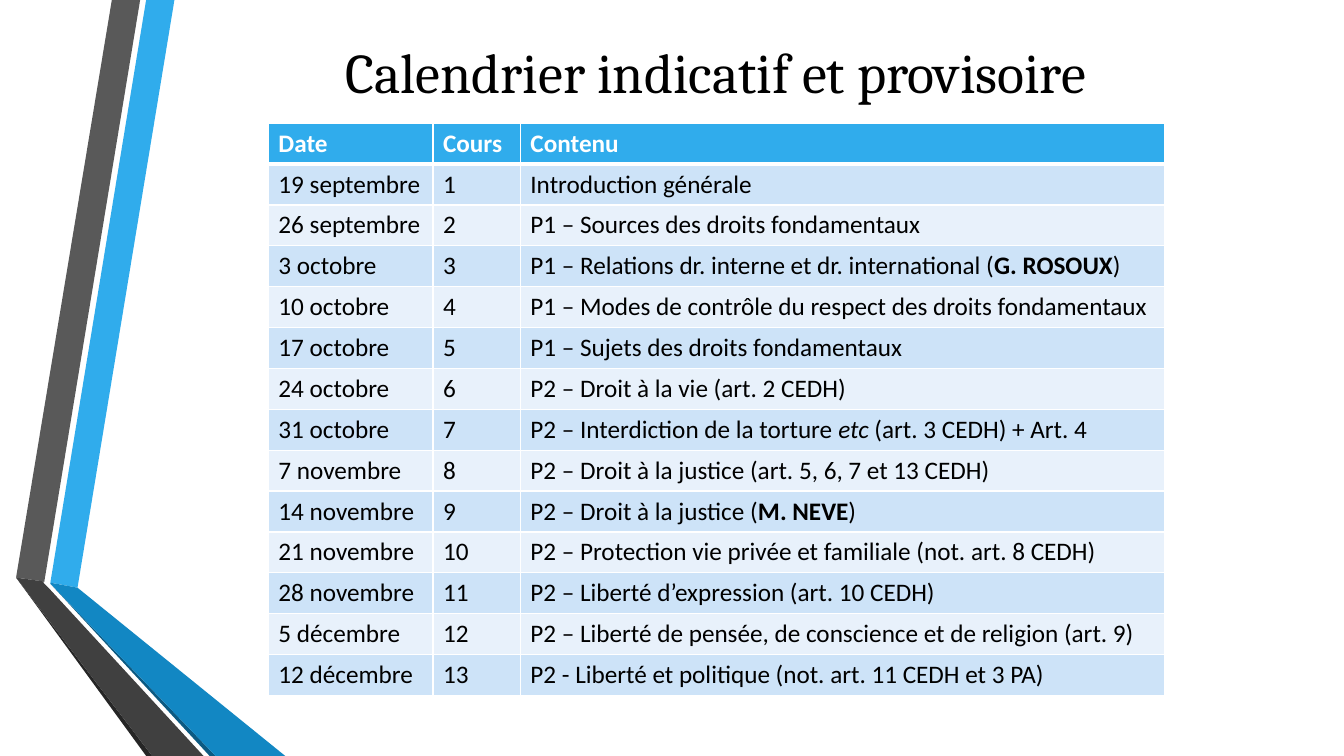
from lxml.etree import SubElement
from pptx import Presentation
from pptx.dml.color import RGBColor as Color
from pptx.enum.text import MSO_ANCHOR as Anchor, PP_ALIGN as Align
from pptx.oxml.ns import qn
from pptx.util import Pt

TITLE = "Calendrier indicatif et provisoire"
HEADER = ("Date", "Cours", "Contenu")
BOLD, ITALIC = {"bold": True}, {"italic": True}
COURSES = [
    ("19 septembre", [("Introduction générale", {})]),
    ("26 septembre", [("P1 – Sources des droits fondamentaux", {})]),
    ("3 octobre", [("P1 – Relations dr. interne et dr. international (", {}),
                   ("G. ROSOUX", BOLD), (")", {})]),
    ("10 octobre", [("P1 – Modes de contrôle du respect des droits fondamentaux", {})]),
    ("17 octobre", [("P1 – Sujets des droits fondamentaux", {})]),
    ("24 octobre", [("P2 – Droit à la vie (art. 2 CEDH)", {})]),
    ("31 octobre", [("P2 – Interdiction de la torture ", {}),
                    ("etc ", ITALIC), ("(art. 3 CEDH) + Art. 4", {})]),
    ("7 novembre", [("P2 – Droit à la justice (art. 5, 6, 7 et 13 CEDH)", {})]),
    ("14 novembre", [("P2 – Droit à la justice (", {}), ("M. NEVE", BOLD), (")", {})]),
    ("21 novembre", [("P2 – Protection vie privée et familiale (not. art. 8 CEDH)", {})]),
    ("28 novembre", [("P2 – Liberté d’expression (art. 10 CEDH)", {})]),
    ("5 décembre", [("P2 – Liberté de pensée, de conscience et de religion (art. 9)", {})]),
    ("12 décembre", [("P2 - Liberté et politique (not. art. 11 CEDH et 3 PA)", {})]),
]

THEME = {
    "blue": "30ACEC", "blue_fold": "1287C3", "blue_edge": "0C5A82",
    "grey": "595959", "grey_fold": "404040", "grey_edge": "262626",
    "bands": ("CDE3F8", "E8F1FB"), "white": "FFFFFF", "black": "000000",
    "title": {"name": "Cambria", "size": Pt(40)},
    "cell": {"name": "Calibri", "size": Pt(18)},
}

WIDTH, HEIGHT = 960, 540
RIBBONS = [
    ("blue", [(36, 416.2), (55.4, 419.8), (124.6, 0), (104.4, 0)]),
    ("grey", [(100.1, 0), (79.9, 0), (11.5, 412.6), (31.7, 415.4)]),
    ("grey_edge", [(11.5, 412.6), (104.4, HEIGHT), (108.7, HEIGHT)]),
    ("blue_edge", [(36, 416.9), (149.8, HEIGHT), (154.1, HEIGHT)]),
    ("blue_fold", [(36, 416.2), (36, 416.9), (154.1, HEIGHT), (203.8, HEIGHT),
                   (55.4, 419.8)]),
    ("grey_fold", [(145.4, HEIGHT), (34.6, 419.8), (31, 416.2), (31.7, 415.4),
                   (11.5, 412.6), (108.7, HEIGHT)]),
]
TITLE_BOX = (116.6, 23, 789.1, 55.4)
TABLE_LEFT, TABLE_TOP = 191.7, 88
COLUMNS = (117.6, 62.4, 460)
ROW_HEIGHT = 29.2
RULE, HEADER_RULE = 1, 3


def add_span(para, text, color, formats):
    span = para.add_run()
    span.text = text
    span.font.color.rgb = Color.from_string(color)
    for name, value in formats.items():
        setattr(span.font, name, value)


def add_ribbon(slide, color, corners):
    points = [(Pt(x), Pt(y)) for x, y in corners]
    builder = slide.shapes.build_freeform(*points[0], scale=1.0)
    builder.add_line_segments(points[1:], close=True)
    ribbon = builder.convert_to_shape()
    ribbon.shadow.inherit = False
    ribbon.fill.solid()
    ribbon.fill.fore_color.rgb = Color.from_string(color)
    ribbon.line.fill.background()


def add_title(slide):
    box = slide.shapes.add_textbox(*map(Pt, TITLE_BOX))
    frame = box.text_frame
    frame.word_wrap = True
    frame.vertical_anchor = Anchor.MIDDLE
    para = frame.paragraphs[0]
    para.alignment = Align.CENTER
    add_span(para, TITLE, THEME["black"], THEME["title"])


def add_borders(cell, row):
    top = HEADER_RULE if row == 1 else RULE
    bottom = HEADER_RULE if row == 0 else RULE
    properties = cell._tc.get_or_add_tcPr()
    for side, width in (("L", RULE), ("R", RULE), ("T", top), ("B", bottom)):
        line = SubElement(properties, qn(f"a:ln{side}"), w=str(Pt(width)))
        fill = SubElement(line, qn("a:solidFill"))
        SubElement(fill, qn("a:srgbClr"), val=THEME["white"])


def add_calendar(slide):
    rows = [[[(label, BOLD)] for label in HEADER]]
    for number, (date, content) in enumerate(COURSES, 1):
        rows.append([[(date, {})], [(str(number), {})], content])
    frame = slide.shapes.add_table(
        len(rows), len(COLUMNS), Pt(TABLE_LEFT), Pt(TABLE_TOP),
        Pt(sum(COLUMNS)), Pt(ROW_HEIGHT * len(rows)))
    table = frame.table
    for column, width in zip(table.columns, COLUMNS):
        column.width = Pt(width)
    for row, cells in enumerate(rows):
        table.rows[row].height = Pt(ROW_HEIGHT)
        fill = THEME["bands"][(row - 1) % 2] if row else THEME["blue"]
        color = THEME["black"] if row else THEME["white"]
        for column, spans in enumerate(cells):
            cell = table.cell(row, column)
            add_borders(cell, row)
            cell.fill.solid()
            cell.fill.fore_color.rgb = Color.from_string(fill)
            for text, emphasis in spans:
                formats = {"bold": False, **THEME["cell"], **emphasis}
                add_span(cell.text_frame.paragraphs[0], text, color, formats)


def main():
    deck = Presentation()
    deck.slide_width, deck.slide_height = Pt(WIDTH), Pt(HEIGHT)
    slide = deck.slides.add_slide(deck.slide_layouts[6])
    for color, corners in RIBBONS:
        add_ribbon(slide, THEME[color], corners)
    add_title(slide)
    add_calendar(slide)
    deck.save("out.pptx")


if __name__ == "__main__":
    main()
